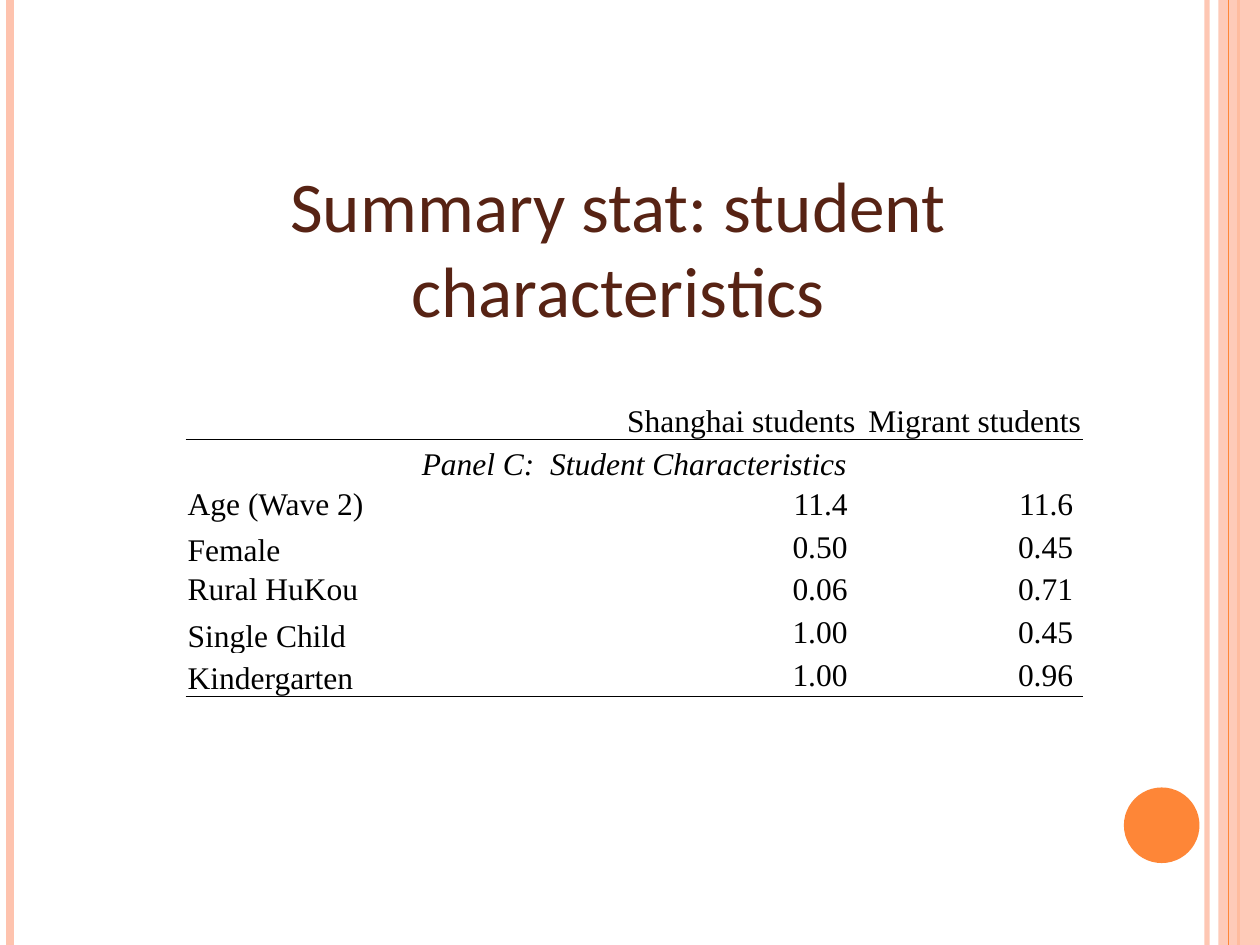
from lxml.etree import SubElement
from pptx import Presentation
from pptx.dml.color import RGBColor
from pptx.enum.shapes import MSO_CONNECTOR, MSO_SHAPE
from pptx.enum.text import MSO_ANCHOR, PP_ALIGN
from pptx.oxml import parse_xml
from pptx.oxml.ns import nsdecls, qn
from pptx.util import Inches, Pt

PINK, ORANGE, BROWN, BLACK = "FEC3AE", "FE8637", "572314", "000000"
LEFT, MID, RIGHT = PP_ALIGN.LEFT, PP_ALIGN.CENTER, PP_ALIGN.RIGHT
COLS = [1.74, 0.84, 0.31, 2.43, 1.79]
HEADS = ["Shanghai students", "Migrant students"]
PANEL = "Panel C:  Student Characteristics"
# label, its anchor, Shanghai mean, migrant mean
STATS = [
    ("Age (Wave 2)", MSO_ANCHOR.MIDDLE, "11.4 ", "11.6 "),
    ("Female", MSO_ANCHOR.BOTTOM, "0.50 ", "0.45 "),
    ("Rural HuKou", MSO_ANCHOR.MIDDLE, "0.06 ", "0.71 "),
    ("Single Child", MSO_ANCHOR.BOTTOM, "1.00 ", "0.45 "),
    ("Kindergarten", MSO_ANCHOR.BOTTOM, "1.00 ", "0.96 "),
]


def color(code):
    return RGBColor.from_string(code)


def fade(part, alpha):
    """Set the opacity, in percent, of the solid fill inside part."""
    tone = next(part.iter(qn("a:srgbClr")))
    SubElement(tone, qn("a:alpha"), val=str(alpha * 1000))


class Deck:
    """Holds the style and the current slide."""

    body, head = "Times New Roman", "Calibri"
    size = 18

    def __init__(self):
        self.file = Presentation()
        self.file.slide_width, self.file.slide_height = Inches(10), Inches(7.5)
        self.slide = self.file.slides.add_slide(self.file.slide_layouts[6])

    def rule(self, x, width, code, alpha=100):
        """Draw a line from top to bottom of the slide."""
        line = self.slide.shapes.add_connector(
            MSO_CONNECTOR.STRAIGHT, Inches(x), 0, Inches(x), Inches(7.5))
        line.line.width = Pt(width)
        line.line.color.rgb = color(code)
        SubElement(line._element.spPr, qn("a:effectLst"))
        if alpha < 100:
            fade(line._element.spPr, alpha)

    def shape(self, kind, box, code, alpha=100):
        shape = self.slide.shapes.add_shape(kind, *map(Inches, box))
        shape.shadow.inherit = False
        shape.fill.solid()
        shape.fill.fore_color.rgb = color(code)
        shape.line.fill.background()
        if alpha < 100:
            fade(shape._element.spPr, alpha)

    def text(self, para, text, font, size, code, align, italic=False):
        para.text = text
        para.alignment = align
        for run in para.runs:
            run.font.name, run.font.size = font, Pt(size)
            run.font.color.rgb = color(code)
            run.font.italic = italic

    def title(self, text, box):
        frame = self.slide.shapes.add_textbox(*map(Inches, box)).text_frame
        frame.word_wrap = True
        frame.vertical_anchor = MSO_ANCHOR.MIDDLE
        self.text(frame.paragraphs[0], text, self.head, 40.7, BROWN, MID)

    def table(self, box, cols, rows):
        """Add a plain table without fills or bands."""
        table = self.slide.shapes.add_table(
            len(rows), len(cols), *map(Inches, box)).table
        table.first_row = table.horz_banding = False
        for col, width in zip(table.columns, cols):
            col.width = Inches(width)
        for row, height in zip(table.rows, rows):
            row.height = Inches(height)
        for cell in table.iter_cells():
            cell.fill.background()
            cell.margin_left = cell.margin_right = Inches(0.01)
            cell.margin_top, cell.margin_bottom = Inches(0.01), 0
        return table

    def cell(self, cell, text, align, anchor=MSO_ANCHOR.BOTTOM, end=None,
             italic=False):
        """Fill a cell, merging it up to the cell end if one is given."""
        if end is not None:
            cell.merge(end)
        cell.vertical_anchor = anchor
        self.text(cell.text_frame.paragraphs[0], text, self.body, self.size,
                  BLACK, align, italic)

    def edge(self, table, row, side, width):
        """Rule one side, lnT or lnB, of a whole row."""
        for col in range(len(table.columns)):
            props = table.cell(row, col)._tc.get_or_add_tcPr()
            props.insert(0, parse_xml(
                f'<a:{side} {nsdecls("a")} w="{Pt(width)}"><a:solidFill>'
                f'<a:srgbClr val="{BLACK}"/></a:solidFill></a:{side}>'))


def main():
    deck = Deck()
    deck.rule(9.58, 3, PINK, 93)
    deck.rule(0.08, 4.5, PINK)
    deck.rule(9.83, 1.5, ORANGE)
    deck.shape(MSO_SHAPE.RECTANGLE, (9.67, 0, 0.33, 7.5), PINK, 87)
    deck.rule(9.75, 0.75, ORANGE)
    deck.shape(MSO_SHAPE.OVAL, (8.92, 6.25, 0.6, 0.6), ORANGE)

    rows = [1.38] + [0.34] * (len(STATS) + 1)
    table = deck.table((1.48, 2.11, sum(COLS), sum(rows)), COLS, rows)
    at = table.cell
    deck.cell(at(0, 2), HEADS[0], RIGHT, end=at(0, 3))
    deck.cell(at(0, 4), HEADS[1], RIGHT)
    deck.cell(at(1, 0), PANEL, MID, end=at(1, 4), italic=True)
    for row, (label, anchor, *means) in enumerate(STATS, 2):
        deck.cell(at(row, 0), label, LEFT, anchor, at(row, 2))
        for col, mean in enumerate(means, 3):
            deck.cell(at(row, col), mean, RIGHT, MSO_ANCHOR.MIDDLE)
    deck.edge(table, 0, "lnB", 1)
    deck.edge(table, 1, "lnT", 1)
    deck.edge(table, len(rows) - 1, "lnB", 0.5)

    deck.title("Summary stat: student characteristics",
               (0.55, 1.33, 8.71, 1.25))
    deck.file.save("out.pptx")


if __name__ == "__main__":
    main()
